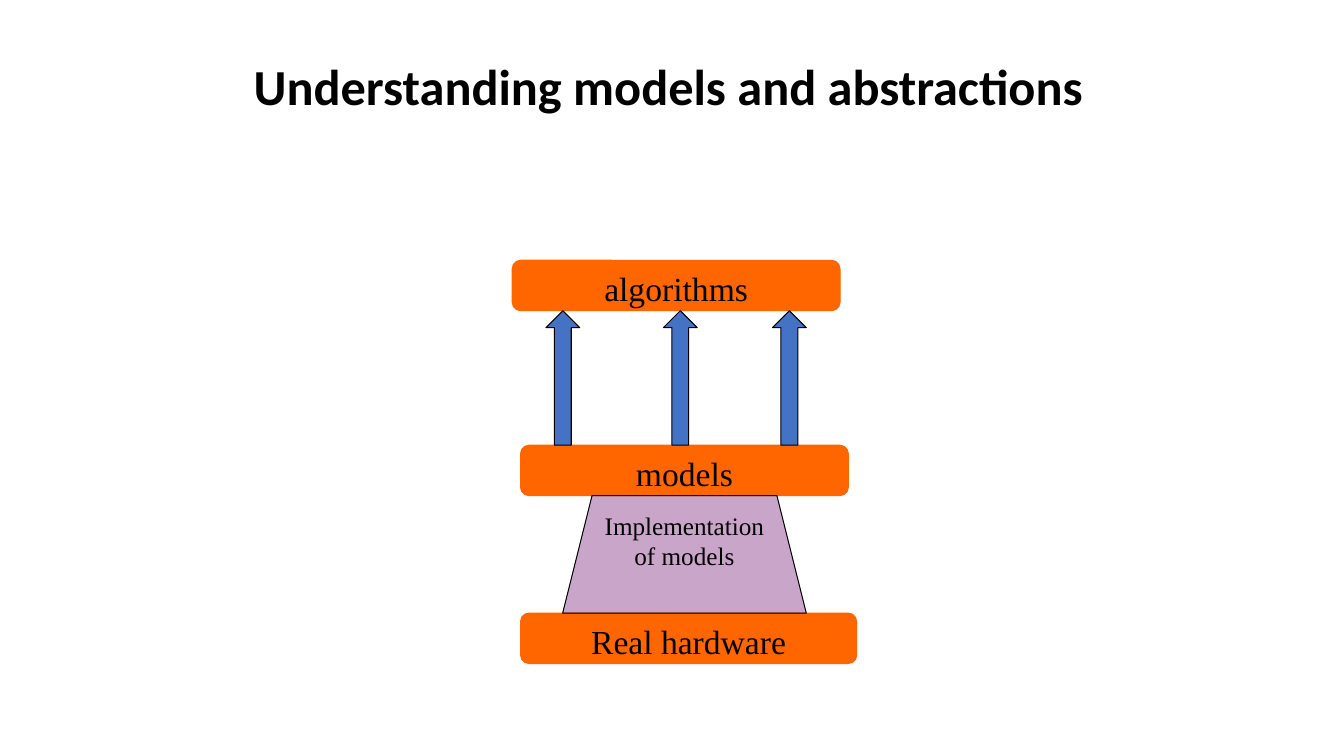
"""Build the slide on models and abstractions."""
from dataclasses import dataclass

from lxml import etree
from pptx import Presentation
from pptx.dml.color import RGBColor
from pptx.enum.shapes import MSO_SHAPE
from pptx.enum.text import MSO_ANCHOR, MSO_AUTO_SIZE, PP_ALIGN
from pptx.oxml.ns import qn
from pptx.util import Cm, Pt

ROUND = MSO_SHAPE.ROUNDED_RECTANGLE
ARROW = MSO_SHAPE.UP_ARROW
TRAPEZOID = MSO_SHAPE.TRAPEZOID
TOP, MIDDLE = MSO_ANCHOR.TOP, MSO_ANCHOR.MIDDLE
LEFT, CENTER = PP_ALIGN.LEFT, PP_ALIGN.CENTER
NO_FIT = MSO_AUTO_SIZE.NONE


@dataclass(frozen=True)
class Theme:
    """Colours, fonts and type sizes of the slide."""
    ink: str = "000000"
    layer: str = "FF6600"
    arrow: str = "4472C4"
    bridge: str = "660066"
    alpha: int = 35
    head: str = "Calibri"
    body: str = "Times New Roman"
    title: int = 36
    label: int = 24
    note: int = 18
    line: float = 0.75


THEME = Theme()


def style(frame, font, size, align, bold=False):
    """Format every run in a text frame."""
    for para in frame.paragraphs:
        para.alignment = align
        for run in para.runs:
            run.font.name = font
            run.font.size = Pt(size)
            run.font.bold = bold
            run.font.color.rgb = RGBColor.from_string(THEME.ink)


def add_title(slide, text):
    """Place and format the title."""
    title = slide.shapes.title
    title.left, title.top = Cm(6.14), Cm(1.27)
    title.width, title.height = Cm(21.59), Cm(3.81)
    frame = title.text_frame
    frame.text = text
    frame.auto_size = NO_FIT
    frame.vertical_anchor = MIDDLE
    frame.paragraphs[0].line_spacing = 0.9
    style(frame, THEME.head, THEME.title, LEFT, True)


def add_block(slide, kind, box, fill, line):
    """Add a filled and outlined shape."""
    block = slide.shapes.add_shape(kind, *map(Cm, box))
    block.shadow.inherit = False
    block.fill.solid()
    block.fill.fore_color.rgb = RGBColor.from_string(fill)
    block.line.color.rgb = RGBColor.from_string(line)
    block.line.width = Pt(THEME.line)
    return block


def add_label(block, text, size):
    """Write centred text at the top of a shape."""
    frame = block.text_frame
    frame.text = text
    frame.word_wrap = True
    frame.vertical_anchor = TOP
    style(frame, THEME.body, size, CENTER)


def add_layer(slide, text, left, top, width):
    """Add one labelled layer of the stack."""
    box = left, top, width, 1.27
    block = add_block(slide, ROUND, box, THEME.layer, THEME.layer)
    add_label(block, text, THEME.label)


def add_bridge(slide, text):
    """Add the translucent trapezoid between two layers."""
    box = 14.18, 12.49, 6.14, 2.96
    block = add_block(slide, TRAPEZOID, box, THEME.bridge, THEME.ink)
    color = block.fill._xPr.find(qn("a:solidFill"))[0]
    etree.SubElement(color, qn("a:alpha"), val=str(THEME.alpha * 1000))
    add_label(block, text, THEME.note)


def main():
    """Build and save the slide."""
    deck = Presentation()
    deck.slide_width, deck.slide_height = Cm(33.87), Cm(19.05)
    slide = deck.slides.add_slide(deck.slide_layouts[5])
    add_title(slide, "Understanding models and abstractions\v")
    layers = (
        ("algorithms", 12.91, 6.56, 8.26),
        ("models", 13.12, 11.22, 8.26),
        ("Real hardware", 13.12, 15.45, 8.47),
    )
    for layer in layers:
        add_layer(slide, *layer)
    for left in (13.76, 16.72, 19.47):
        box = left, 7.83, 0.85, 3.39
        add_block(slide, ARROW, box, THEME.arrow, THEME.ink)
    add_bridge(slide, "Implementation of models")
    deck.save("out.pptx")


if __name__ == "__main__":
    main()
